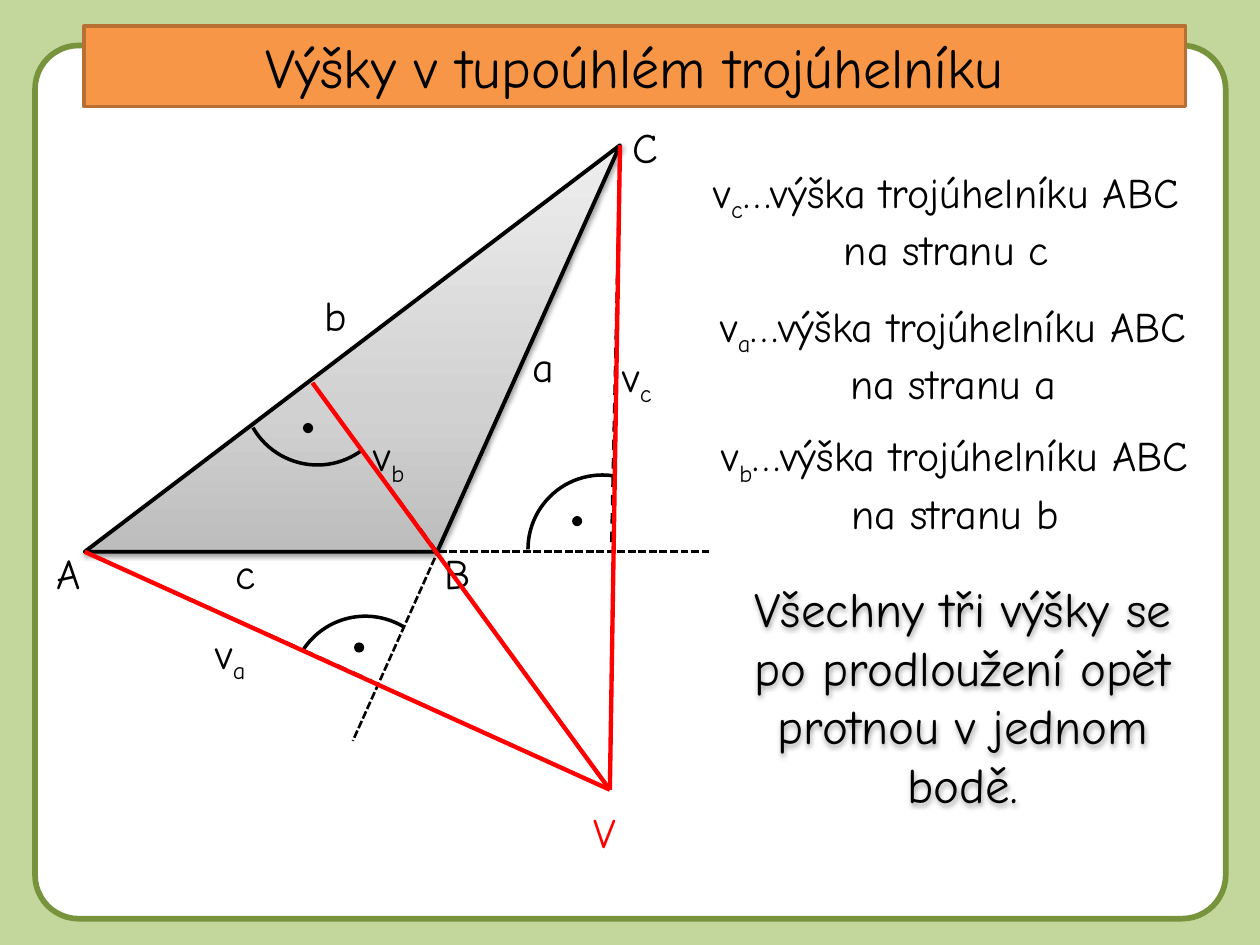
from dataclasses import dataclass

from lxml import etree
from pptx import Presentation
from pptx.dml.color import RGBColor
from pptx.enum import dml, shapes, text
from pptx.oxml.ns import qn
from pptx.util import Pt


@dataclass(frozen=True)
class Theme:
    font: str = "Comic Neue"
    background: str = "C3D69B"
    panel: str = "FFFFFF"
    panel_edge: str = "77933C"
    banner: str = "F79646"
    banner_edge: str = "B76F34"
    ink: str = "000000"
    altitude: str = "FF0000"
    gradient: tuple = ((0, "BDBDBD"), (35, "D1D1D1"), (100, "EEEEEE"))
    title_size: float = 32
    conclusion_size: float = 28
    body_size: float = 24


class TriangleSlide:
    def __init__(self, prs, theme):
        self.theme = theme
        self.slide = prs.slides.add_slide(prs.slide_layouts[6])
        fill = self.slide.background.fill
        fill.solid()
        fill.fore_color.rgb = RGBColor.from_string(theme.background)

    def outline(self, sp, color, width):
        if color is None:
            sp.line.fill.background()
        else:
            sp.line.color.rgb = RGBColor.from_string(color)
            sp.line.width = Pt(width)

    def shape(self, kind, left, top, width, height, fill=None, line=None,
              line_width=2, rotation=0):
        sp = self.slide.shapes.add_shape(
            kind, Pt(left), Pt(top), Pt(width), Pt(height))
        sp.shadow.inherit = False
        sp.rotation = rotation
        if fill is None:
            sp.fill.background()
        else:
            sp.fill.solid()
            sp.fill.fore_color.rgb = RGBColor.from_string(fill)
        self.outline(sp, line, line_width)
        return sp

    def soft_shadow(self, sp):
        sp.shadow.inherit = False
        effects = sp._element.spPr.find(qn("a:effectLst"))
        shadow = etree.SubElement(
            effects, qn("a:outerShdw"), blurRad=str(Pt(3.1)), dist=str(Pt(1.6)),
            dir="5400000", rotWithShape="0")
        color = etree.SubElement(shadow, qn("a:srgbClr"), val=self.theme.ink)
        etree.SubElement(color, qn("a:alpha"), val="38000")

    def triangle(self, *corners):
        first, *rest = [(Pt(x), Pt(y)) for x, y in corners]
        builder = self.slide.shapes.build_freeform(*first, scale=1.0)
        builder.add_line_segments(rest, close=True)
        sp = builder.convert_to_shape()
        sp.fill.gradient()
        sp.fill.gradient_angle = 90
        stops = sp._element.spPr.find(qn("a:gradFill")).find(qn("a:gsLst"))
        for stop in list(stops):
            stops.remove(stop)
        for percent, color in self.theme.gradient:
            stop = etree.SubElement(stops, qn("a:gs"), pos=str(percent * 1000))
            etree.SubElement(stop, qn("a:srgbClr"), val=color)
        self.outline(sp, self.theme.ink, 2.25)
        self.soft_shadow(sp)

    def line(self, start, end, color=None, width=1.5, dash=None):
        sp = self.slide.shapes.add_connector(
            shapes.MSO_CONNECTOR.STRAIGHT, *(Pt(v) for v in (*start, *end)))
        self.outline(sp, color or self.theme.ink, width)
        if dash:
            sp.line.dash_style = dash
        etree.SubElement(sp._element.spPr, qn("a:effectLst"))

    def right_angle(self, center, rotation, dot, sweep_end=4.88):
        """Draw the arc and dot that mark a right angle."""
        radius, dot_radius = 42.5, 2.9
        x, y = center
        arc = self.shape(shapes.MSO_SHAPE.ARC, x - radius, y - radius,
                         2 * radius, 2 * radius, line=self.theme.ink,
                         rotation=rotation)
        arc.adjustments[0] = 162
        arc.adjustments[1] = sweep_end
        x, y = dot
        self.shape(shapes.MSO_SHAPE.OVAL, x - dot_radius, y - dot_radius,
                   2 * dot_radius, 2 * dot_radius, fill=self.theme.ink)

    def set_text(self, sp, content, size, color=None, align=None):
        """Fill a shape with text; the letter after "_" is a subscript."""
        tf = sp.text_frame
        tf.word_wrap = True
        tf.auto_size = text.MSO_AUTO_SIZE.SHAPE_TO_FIT_TEXT
        p = tf.paragraphs[0]
        p.alignment = align
        base, _, tail = content.partition("_")
        for part, is_subscript in ((base, False), (tail[:1], True), (tail[1:], False)):
            if not part:
                continue
            r = p.add_run()
            r.text = part
            r.font.name = self.theme.font
            r.font.size = Pt(size)
            r.font.color.rgb = RGBColor.from_string(color or self.theme.ink)
            if is_subscript:
                r._r.get_or_add_rPr().set("baseline", "-25000")

    def text(self, content, left, top, width=39.6, height=36, size=None,
             color=None, align=None):
        sp = self.slide.shapes.add_textbox(
            Pt(left), Pt(top), Pt(width), Pt(height))
        self.set_text(sp, content, size or self.theme.body_size, color, align)
        return sp


def main():
    prs = Presentation()
    prs.slide_width, prs.slide_height = Pt(720), Pt(540)
    theme = Theme()
    s = TriangleSlide(prs, theme)
    center = text.PP_ALIGN.CENTER

    a, b, c = (48.4, 315.3), (249.8, 315.3), (354.3, 83)
    orthocenter = (348.5, 451.3)
    foot_a, foot_b, foot_c = (212.4, 389), (178.6, 218.8), (349.2, 315.3)

    panel = s.shape(shapes.MSO_SHAPE.ROUNDED_RECTANGLE, 20, 26, 680.4, 499,
                    theme.panel, theme.panel_edge, 3.25)
    panel.adjustments[0] = 0.05
    s.triangle(a, b, c)
    banner = s.shape(shapes.MSO_SHAPE.RECTANGLE, 48, 15, 629.5, 46,
                     theme.banner, theme.banner_edge)
    s.set_text(banner, "Výšky v tupoúhlém trojúhelníku", theme.title_size,
               align=center)

    for name, left, top in (
            ("A", 25.2, 309.6), ("B", 247, 309.6), ("C", 354.3, 66.2),
            ("a", 297.4, 190.8), ("b", 178.6, 162), ("c", 127.4, 309.6),
            ("v_a", 116, 355), ("v_b", 206.6, 242), ("v_c", 348.5, 196.6)):
        s.text(name, left, top)

    for foot, vertex in ((foot_a, a), (foot_b, b), (foot_c, c)):
        s.line(vertex, foot, dash=dml.MSO_LINE.DASH)
    s.right_angle((208.8, 394.6), 301.5, (205.2, 370), sweep_end=0)
    s.right_angle((344.2, 313.9), 270, (329.8, 297.8))
    s.right_angle((181.4, 223.2), 142, (176, 244.6))

    for side, left, top in (("c", 386, 91.4), ("a", 390, 168), ("b", 391, 242)):
        s.text(f"v_{side}…výška trojúhelníku ABC na stranu {side}",
               left, top, 309.5, 65.5, align=center)

    for start, end in (((405.4, 315.3), a), (c, (201.6, 423.4))):
        s.line(start, end, dash=dml.MSO_LINE.SQUARE_DOT)
    for start in (a, foot_b, c):
        s.line(start, orthocenter, theme.altitude, 2.5)

    conclusion = s.text(
        "Všechny tři výšky se po prodloužení opět protnou v jednom bodě.",
        405.4, 326.9, 289.4, 143.3, theme.conclusion_size, align=center)
    s.soft_shadow(conclusion)
    s.text("V", 332, 457.2, color=theme.altitude)
    prs.save("out.pptx")


if __name__ == "__main__":
    main()
